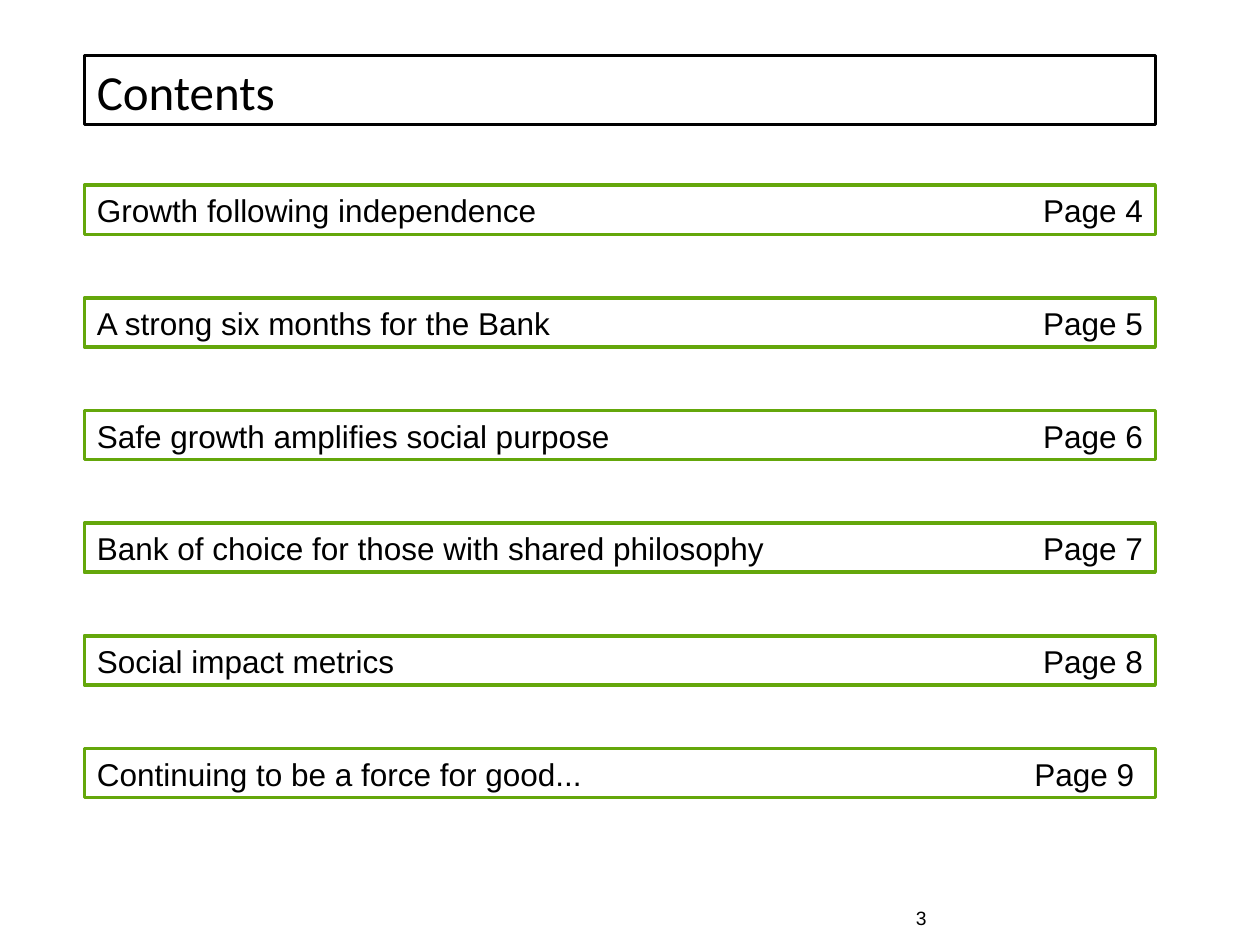
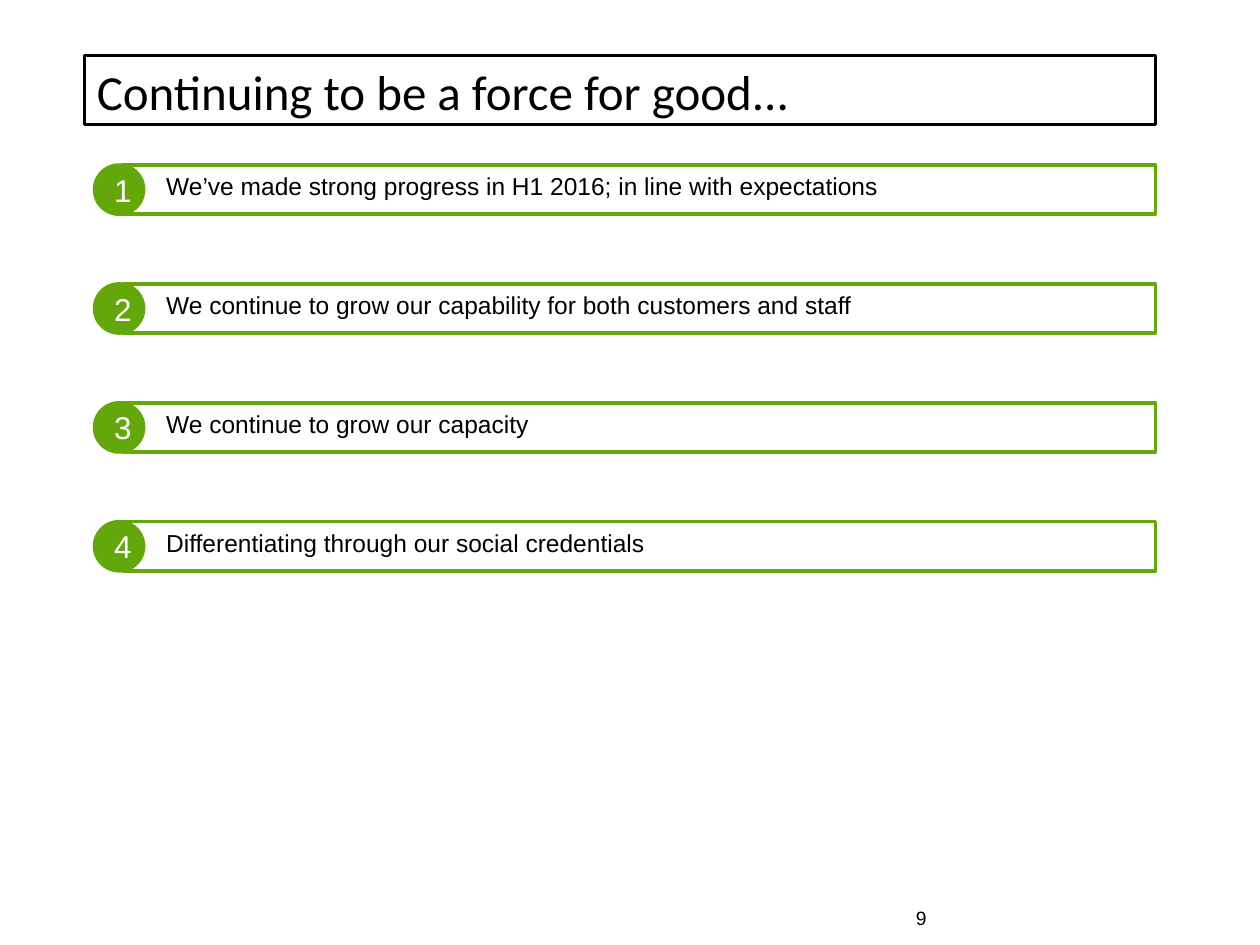
from pptx import Presentation, util as u
from pptx.dml.color import RGBColor
from pptx.enum import shapes, text

# Content
CONTENTS = [
    ("Growth following independence", "Page 4"),
    ("A strong six months for the Bank", "Page 5"),
    ("Safe growth amplifies social purpose", "Page 6"),
    ("Bank of choice for those with shared philosophy", "Page 7"),
    ("Social impact metrics", "Page 8"),
    ("Continuing to be a force for good...", "Page 9 "),
]
CONCLUSIONS = [
    "We’ve made strong progress in H1 2016; in line with expectations",
    "We continue to grow our capability for both customers and staff",
    "We continue to grow our capacity",
    "Differentiating through our social credentials",
]

# Shared style, lengths in inches
COLOURS = {"ink": "000000", "paper": "FFFFFF", "green": "64A70B"}
WIDTH, HEIGHT = 10, 7.5
LEFT, RIGHT = 0.67, 9.17
BAR = 0.39
RECT = shapes.MSO_SHAPE.RECTANGLE
OVAL = shapes.MSO_SHAPE.OVAL
ALIGN = text.PP_ALIGN
ANCHOR = text.MSO_ANCHOR


def colour(name):
    return RGBColor.from_string(COLOURS[name])


def write(box, words, size, font="Arial", ink="ink", align=ALIGN.LEFT, anchor=ANCHOR.TOP):
    frame = box.text_frame
    frame.word_wrap = True
    frame.vertical_anchor = anchor
    para = frame.paragraphs[0]
    para.alignment = align
    span = para.add_run()
    span.text = words
    span.font.name = font
    span.font.size = u.Pt(size)
    span.font.color.rgb = colour(ink)


def add_label(page, left, top, width, height, words, size, **style):
    box = page.shapes.add_textbox(*map(u.Inches, (left, top, width, height)))
    write(box, words, size, **style)


def add_outline(page, kind, left, top, width, height, line="green", fill=None):
    shape = page.shapes.add_shape(kind, *map(u.Inches, (left, top, width, height)))
    shape.shadow.inherit = False
    if fill:
        shape.fill.solid()
        shape.fill.fore_color.rgb = colour(fill)
    else:
        shape.fill.background()
    shape.line.color.rgb = colour(line)
    shape.line.width = u.Pt(2)
    return shape


def add_page(deck, title, number):
    page = deck.slides.add_slide(deck.slide_layouts[6])
    band = add_outline(page, RECT, LEFT, 0.44, RIGHT - LEFT, 0.55, "ink", "paper")
    write(band, title, 28, font="Calibri")
    add_label(page, 7.17, 7.14, 2.33, 0.21, number, 11)
    return page


def spread(items, first, last):
    """Pair each item with its top, at equal steps from first to last."""
    step = (last - first) / (len(items) - 1)
    return [(first + i * step, item) for i, item in enumerate(items)]


def add_contents(deck):
    page = add_page(deck, "Contents", "3")
    page_width = 1.57
    for top, (topic, page_ref) in spread(CONTENTS, 1.47, 5.94):
        add_outline(page, RECT, LEFT, top, RIGHT - LEFT, BAR)
        add_label(page, LEFT, top, 5.59, 0.4, topic, 18)
        add_label(page, RIGHT - page_width, top, page_width, 0.4, page_ref, 18,
                  align=ALIGN.RIGHT)


def add_conclusions(deck):
    page = add_page(deck, CONTENTS[-1][0], "9")
    bar_left, badge_left, text_left = 0.98, 0.75, 1.22
    for number, (top, point) in enumerate(spread(CONCLUSIONS, 1.31, 4.14), 1):
        add_outline(page, RECT, bar_left, top, RIGHT - bar_left, BAR)
        badge = add_outline(page, OVAL, badge_left, top, BAR, BAR, fill="green")
        write(badge, str(number), 18, ink="paper", align=ALIGN.CENTER, anchor=ANCHOR.MIDDLE)
        add_label(page, text_left, top, RIGHT - text_left, 0.34, point, 14)


def main():
    deck = Presentation()
    deck.slide_width, deck.slide_height = u.Inches(WIDTH), u.Inches(HEIGHT)
    add_contents(deck)
    add_conclusions(deck)
    deck.save("out.pptx")


if __name__ == "__main__":
    main()
